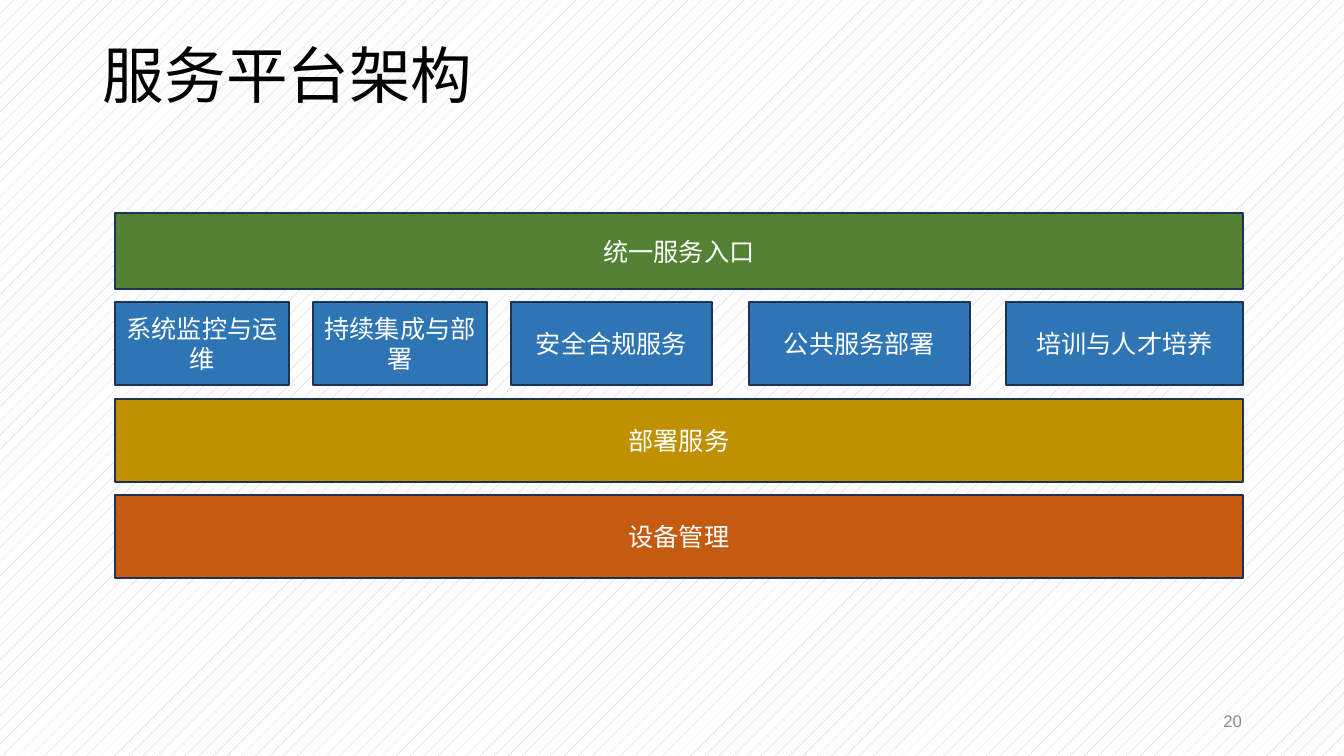
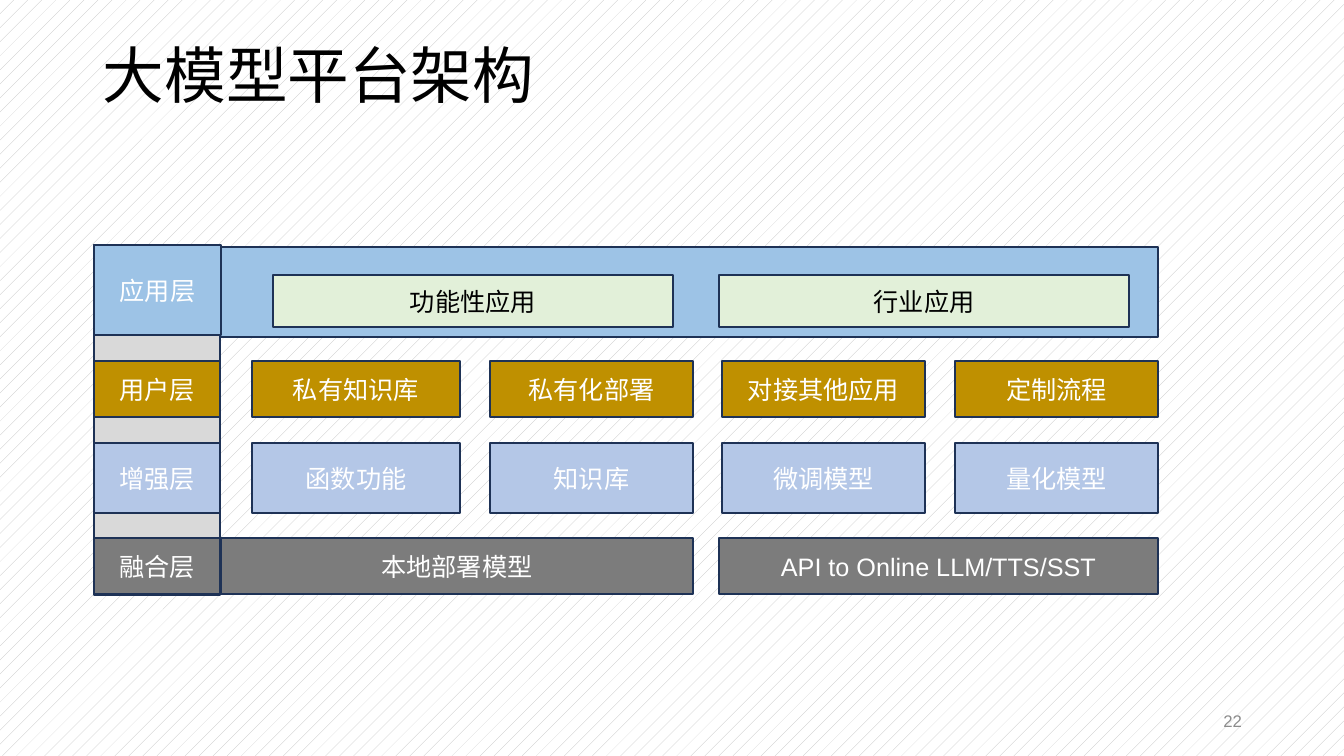
from pptx import Presentation
from pptx.dml.color import RGBColor
from pptx.enum.dml import MSO_PATTERN
from pptx.enum.shapes import MSO_SHAPE
from pptx.enum.text import MSO_ANCHOR, PP_ALIGN
from pptx.util import Emu, Pt

SLIDE_WIDTH, SLIDE_HEIGHT = 1344, 756
EMU_PER_PX = 12192000 / SLIDE_WIDTH

WHITE, BLACK, NUMBER_GREY = "FFFFFF", "000000", "8C8C8C"
HATCH, OUTLINE, RAIL_GREY = "BFBFBF", "1E3256", "D9D9D9"
GREEN, BLUE, GOLD, ORANGE = "548235", "2E75B6", "BF9000", "C55A11"
SKY, PERIWINKLE, SLATE, MINT = "9DC3E6", "B4C7E7", "7C7C7C", "E2F0D9"
BODY_FONT, TITLE_FONT = "Arial", "Montserrat"


def px(length):
    return Emu(round(length * EMU_PER_PX))


def color(code):
    return RGBColor.from_string(code)


class DeckBuilder:
    def __init__(self):
        self.deck = Presentation()
        self.deck.slide_width = px(SLIDE_WIDTH)
        self.deck.slide_height = px(SLIDE_HEIGHT)
        self.page = None

    def add_page(self, title, number):
        self.page = self.deck.slides.add_slide(self.deck.slide_layouts[6])
        fill = self.page.background.fill
        fill.patterned()
        fill.pattern = MSO_PATTERN.PERCENT_5
        fill.fore_color.rgb = color(HATCH)
        fill.back_color.rgb = color(WHITE)
        heading = self.text_box(93, 40, 1159, 146)
        para = self.set_text(heading, title, TITLE_FONT, 44, BLACK, PP_ALIGN.LEFT)
        para.line_spacing = 0.9
        footer = self.text_box(950, 701, 302, 40, MSO_ANCHOR.MIDDLE)
        self.set_text(footer, str(number), BODY_FONT, 12, NUMBER_GREY, PP_ALIGN.RIGHT)

    def text_box(self, left, top, width, height, anchor=MSO_ANCHOR.TOP):
        box = self.page.shapes.add_textbox(px(left), px(top), px(width), px(height))
        box.text_frame.word_wrap = True
        box.text_frame.vertical_anchor = anchor
        return box

    def set_text(self, box, text, font, size, text_color, alignment):
        para = box.text_frame.paragraphs[0]
        para.text = text
        para.alignment = alignment
        para.font.name = font
        para.font.size = Pt(size)
        para.font.color.rgb = color(text_color)
        return para

    def block(self, left, top, width, height, fill, text="", text_color=WHITE):
        box = self.page.shapes.add_shape(
            MSO_SHAPE.RECTANGLE, px(left), px(top), px(width), px(height))
        box.shadow.inherit = False
        box.fill.solid()
        box.fill.fore_color.rgb = color(fill)
        box.line.color.rgb = color(OUTLINE)
        box.line.width = Pt(1)
        if text:
            box.text_frame.word_wrap = True
            box.text_frame.vertical_anchor = MSO_ANCHOR.MIDDLE
            self.set_text(box, text, BODY_FONT, 18, text_color, PP_ALIGN.CENTER)


def add_service_platform(builder):
    builder.add_page("服务平台架构", 20)
    for top, height, fill, text in (
        (213, 76, GREEN, "统一服务入口"),
        (399, 83, GOLD, "部署服务"),
        (495, 83, ORANGE, "设备管理"),
    ):
        builder.block(115, top, 1128, height, fill, text)
    for left, width, text in (
        (115, 174, "系统监控与运维"),
        (313, 174, "持续集成与部署"),
        (511, 201, "安全合规服务"),
        (749, 221, "公共服务部署"),
        (1006, 237, "培训与人才培养"),
    ):
        builder.block(left, 302, width, 83, BLUE, text)


def add_model_platform(builder):
    builder.add_page("大模型平台架构", 22)
    rail_left, rail_width = 94, 126
    columns = ((252, 208), (490, 203), (722, 203), (955, 203))
    halves = ((221, 472), (719, 439))
    applications = ((273, 400), (719, 410))

    builder.block(219, 247, 939, 90, SKY)
    builder.block(rail_left, 245, rail_width, 350, RAIL_GREY)
    builder.block(rail_left, 245, rail_width + 1, 90, SKY, "应用层")
    for (left, width), text in zip(applications, ("功能性应用", "行业应用")):
        builder.block(left, 275, width, 52, MINT, text, BLACK)

    for label, top, height, fill, cells, texts in (
        ("用户层", 361, 56, GOLD, columns,
         ("私有知识库", "私有化部署", "对接其他应用", "定制流程")),
        ("增强层", 443, 70, PERIWINKLE, columns,
         ("函数功能", "知识库", "微调模型", "量化模型")),
        ("融合层", 538, 56, SLATE, halves,
         ("本地部署模型", "API to Online LLM/TTS/SST")),
    ):
        builder.block(rail_left, top, rail_width, height, fill, label)
        for (left, width), text in zip(cells, texts):
            builder.block(left, top, width, height, fill, text)


def main():
    builder = DeckBuilder()
    add_service_platform(builder)
    add_model_platform(builder)
    builder.deck.save("out.pptx")


if __name__ == "__main__":
    main()
